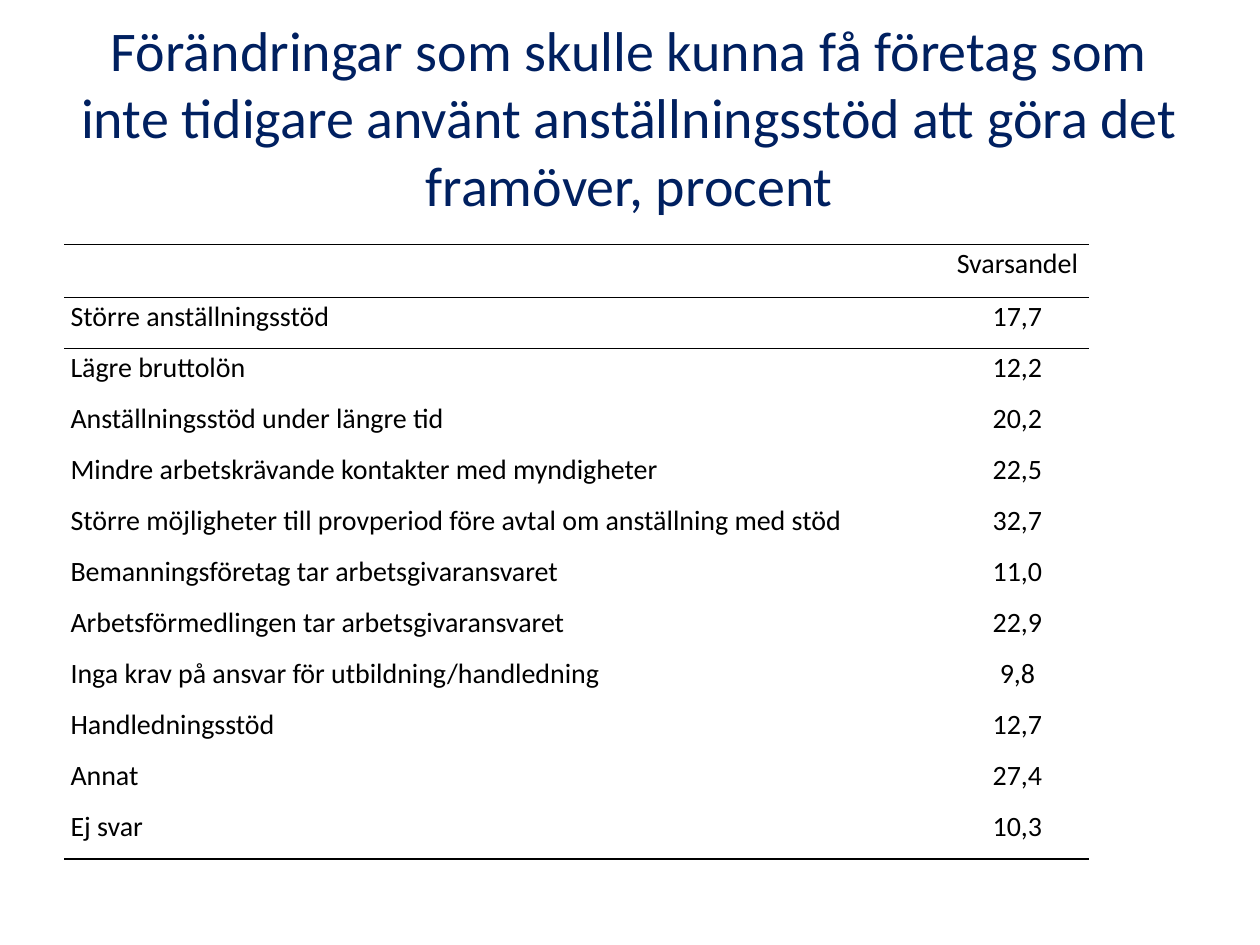
from lxml.etree import SubElement
from pptx import Presentation
from pptx.dml.color import RGBColor
from pptx.enum.text import MSO_ANCHOR, MSO_AUTO_SIZE, PP_ALIGN
from pptx.oxml.ns import qn
from pptx.util import Inches, Pt

COLORS = {"title": "002060", "text": "000000", "rule": "000000"}
FONT = "Calibri"
PLAIN_STYLE = "{2D5ABB26-0587-4C30-8999-92F81FD0307C}"
HEADER_HEIGHT, TABLE_HEIGHT = 0.42, 4.88
ANSWERS = [
    ("", "Svarsandel"),
    ("Större anställningsstöd", "17,7"),
    ("Lägre bruttolön", "12,2"),
    ("Anställningsstöd under längre tid", "20,2"),
    ("Mindre arbetskrävande kontakter med myndigheter", "22,5"),
    ("Större möjligheter till provperiod före avtal om anställning med stöd", "32,7"),
    ("Bemanningsföretag tar arbetsgivaransvaret", "11,0"),
    ("Arbetsförmedlingen tar arbetsgivaransvaret", "22,9"),
    ("Inga krav på ansvar för utbildning/handledning", "9,8"),
    ("Handledningsstöd", "12,7"),
    ("Annat", "27,4"),
    ("Ej svar", "10,3"),
]


def format_text(paragraph, size, color, align):
    paragraph.alignment = align
    for font in [paragraph.font] + [run.font for run in paragraph.runs]:
        font.name, font.size = FONT, Pt(size)
        font.color.rgb = RGBColor.from_string(COLORS[color])


def add_rule(cell, side):
    """Draw a 1 pt border; side is lnT (top) or lnB (bottom), top first."""
    line = SubElement(cell._tc.get_or_add_tcPr(), qn(f"a:{side}"), w=str(Pt(1)))
    fill = SubElement(line, qn("a:solidFill"))
    SubElement(fill, qn("a:srgbClr"), val=COLORS["rule"])


prs = Presentation()
prs.slide_width, prs.slide_height = Inches(10), Inches(7.5)
slide = prs.slides.add_slide(prs.slide_layouts[5])

title = slide.shapes.title
title.left, title.top = Inches(0.5), Inches(0.3)
title.width, title.height = Inches(8.99), Inches(1.25)
heading = title.text_frame
heading.text = ("Förändringar som skulle kunna få företag som inte tidigare "
                "använt anställningsstöd att göra det framöver, procent")
heading.auto_size = MSO_AUTO_SIZE.NONE
heading.vertical_anchor = MSO_ANCHOR.MIDDLE
format_text(heading.paragraphs[0], 32, "title", PP_ALIGN.CENTER)

last_row = len(ANSWERS) - 1
table = slide.shapes.add_table(len(ANSWERS), 2, Inches(0.51), Inches(1.94),
                               Inches(8.13), Inches(TABLE_HEIGHT)).table
table.first_row = table.horz_banding = False
table._tbl.tblPr.find(qn("a:tableStyleId")).text = PLAIN_STYLE
table.columns[0].width, table.columns[1].width = Inches(7), Inches(1.13)

for r, answer in enumerate(ANSWERS):
    body_height = (TABLE_HEIGHT - HEADER_HEIGHT) / last_row
    table.rows[r].height = Inches(body_height if r else HEADER_HEIGHT)
    for c, wording in enumerate(answer):
        cell = table.cell(r, c)
        cell.margin_left = cell.margin_right = Inches(0.05)
        cell.margin_top = cell.margin_bottom = 0
        cell.vertical_anchor = MSO_ANCHOR.TOP
        paragraph = cell.text_frame.paragraphs[0]
        paragraph.text = wording
        paragraph.line_spacing = 1.07
        format_text(paragraph, 16, "text", PP_ALIGN.CENTER if c else PP_ALIGN.LEFT)
        if r in (0, 1):
            add_rule(cell, "lnT")
        if r in (0, last_row):
            add_rule(cell, "lnB")
        cell.fill.background()

prs.save("out.pptx")
